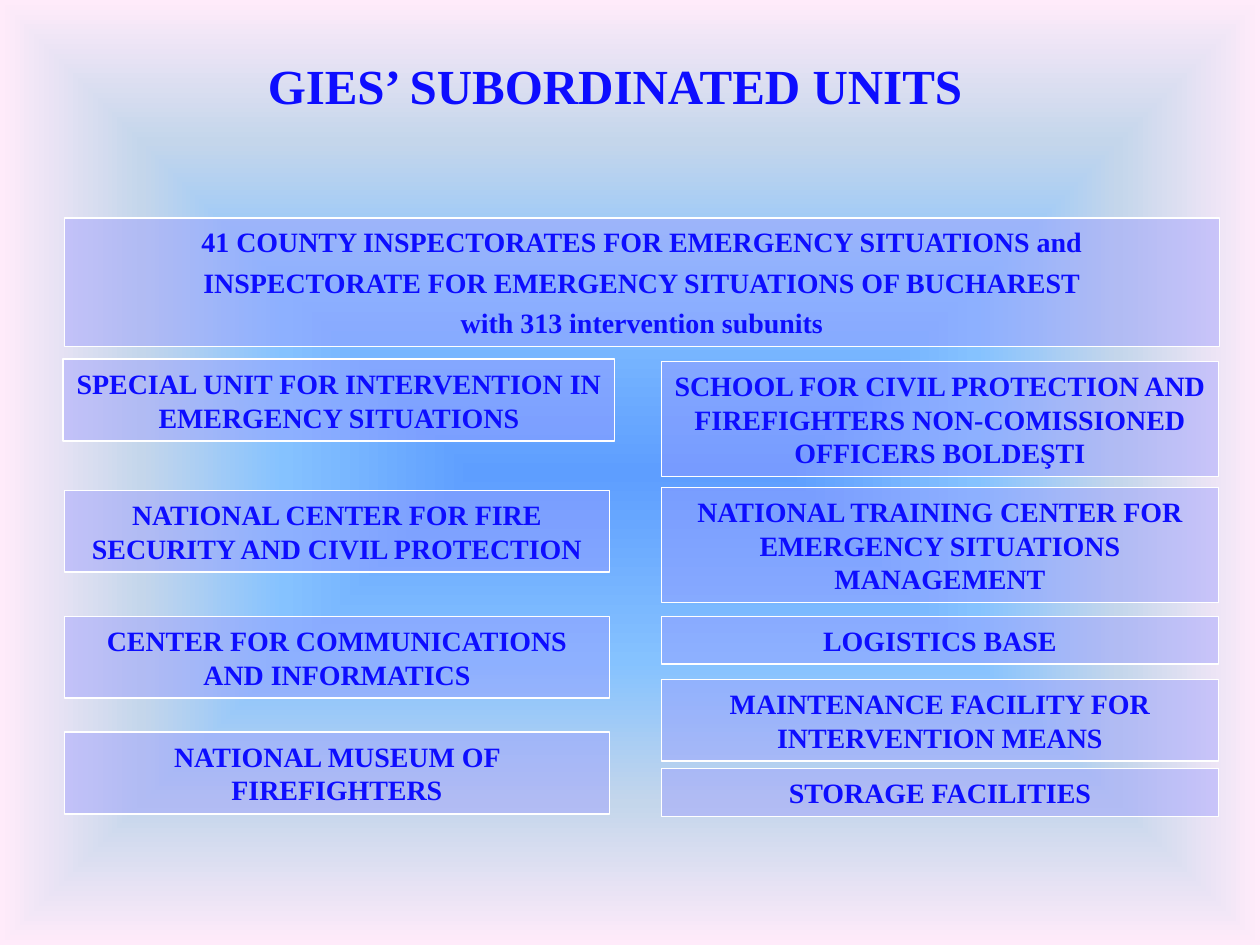
from typing import NamedTuple

from lxml import etree
from pptx import Presentation
from pptx import util as u
from pptx.dml.color import RGBColor
from pptx.enum import shapes, text
from pptx.oxml import parse_xml
from pptx.oxml.ns import nsdecls, qn

COLORS = {"ink": "0D0DFF", "panel": "9999FF", "edge": "FFFFFF"}
GLOW = {0: "5E9EFF", 40: "85C2FF", 70: "C4D6EB", 100: "FFEBFA"}
FONT = "Times New Roman"
PANEL_OPACITY = 43


class Column(NamedTuple):
    left: float
    width: float


class Unit(NamedTuple):
    column: Column
    top: float
    lines: int
    label: str


# Grid in inches; a panel's height follows from its number of lines
FULL = Column(0.51, 9.17)
LEFT = Column(0.51, 4.33)
LEFT_WIDE = Column(0.5, 4.38)
RIGHT = Column(5.25, 4.42)
HEIGHTS = {1: 0.38, 2: 0.65, 3: 0.91}
COUNTY_HEIGHT = 1.02

COUNTY_LINES = [
    "41 COUNTY INSPECTORATES FOR EMERGENCY SITUATIONS and",
    "INSPECTORATE FOR EMERGENCY SITUATIONS OF BUCHAREST",
    "with 313 intervention subunits",
]
UNITS = [
    Unit(LEFT_WIDE, 2.85, 2, "SPECIAL UNIT FOR INTERVENTION IN EMERGENCY SITUATIONS"),
    Unit(LEFT, 3.89, 2, "NATIONAL CENTER FOR FIRE SECURITY AND CIVIL PROTECTION"),
    Unit(LEFT, 4.89, 2, "CENTER FOR COMMUNICATIONS AND INFORMATICS"),
    Unit(LEFT, 5.81, 2, "NATIONAL MUSEUM OF FIREFIGHTERS"),
    Unit(RIGHT, 2.87, 3, "SCHOOL FOR CIVIL PROTECTION AND FIREFIGHTERS "
                         "NON-COMISSIONED OFFICERS BOLDEŞTI"),
    Unit(RIGHT, 3.87, 3, "NATIONAL TRAINING CENTER FOR EMERGENCY SITUATIONS MANAGEMENT"),
    Unit(RIGHT, 4.89, 1, "LOGISTICS BASE"),
    Unit(RIGHT, 5.39, 2, "MAINTENANCE FACILITY FOR INTERVENTION MEANS"),
    Unit(RIGHT, 6.1, 1, "STORAGE FACILITIES"),
]


def write_text(box, lines: list[str], *, size: float = 16, gap: float = 4) -> None:
    """Fill a shape with centred bold paragraphs, spaced apart by gap."""
    frame = box.text_frame
    frame.word_wrap = True
    frame.vertical_anchor = text.MSO_ANCHOR.MIDDLE
    for index, line in enumerate(lines):
        para = frame.add_paragraph() if index else frame.paragraphs[0]
        para.alignment = text.PP_ALIGN.CENTER
        if index:
            para.space_before = u.Pt(gap)
        span = para.add_run()
        span.text = line
        span.font.name = FONT
        span.font.size = u.Pt(size)
        span.font.bold = True
        span.font.color.rgb = RGBColor.from_string(COLORS["ink"])


def add_panel(page, column: Column, top: float, height: float, lines: list[str]) -> None:
    """Draw a translucent outlined rectangle with its text."""
    box = page.shapes.add_shape(
        shapes.MSO_SHAPE.RECTANGLE,
        *map(u.Inches, (column.left, top, column.width, height)))
    box.shadow.inherit = False
    box.fill.solid()
    box.fill.fore_color.rgb = RGBColor.from_string(COLORS["panel"])
    color = box.fill._xPr.find(".//" + qn("a:srgbClr"))
    etree.SubElement(color, qn("a:alpha"), val=str(PANEL_OPACITY * 1000))
    box.line.color.rgb = RGBColor.from_string(COLORS["edge"])
    box.line.width = u.Pt(0.75)
    write_text(box, lines)


def paint_background(page) -> None:
    """Set a rectangular gradient glowing from the centre of the page."""
    stops = "".join(
        f'<a:gs pos="{share * 1000}"><a:srgbClr val="{color}"/></a:gs>'
        for share, color in GLOW.items())
    background = parse_xml(
        f'<p:bg {nsdecls("p", "a")}><p:bgPr><a:gradFill rotWithShape="0">'
        f'<a:gsLst>{stops}</a:gsLst><a:path path="shape">'
        '<a:fillToRect l="50000" t="50000" r="50000" b="50000"/></a:path>'
        '</a:gradFill><a:effectLst/></p:bgPr></p:bg>')
    page._element.cSld.insert(0, background)


def main() -> None:
    deck = Presentation()
    deck.slide_width, deck.slide_height = u.Inches(10), u.Inches(7.5)
    page = deck.slides.add_slide(deck.slide_layouts[6])
    paint_background(page)

    # Title
    title = page.shapes.add_textbox(*map(u.Inches, (0.59, 0.21, 8.58, 0.92)))
    write_text(title, ["GIES’ SUBORDINATED UNITS"], size=28)

    # County inspectorates across the page, other units in two columns
    add_panel(page, FULL, 1.73, COUNTY_HEIGHT, COUNTY_LINES)
    for unit in UNITS:
        add_panel(page, unit.column, unit.top, HEIGHTS[unit.lines], [unit.label])

    deck.save("out.pptx")


if __name__ == "__main__":
    main()
